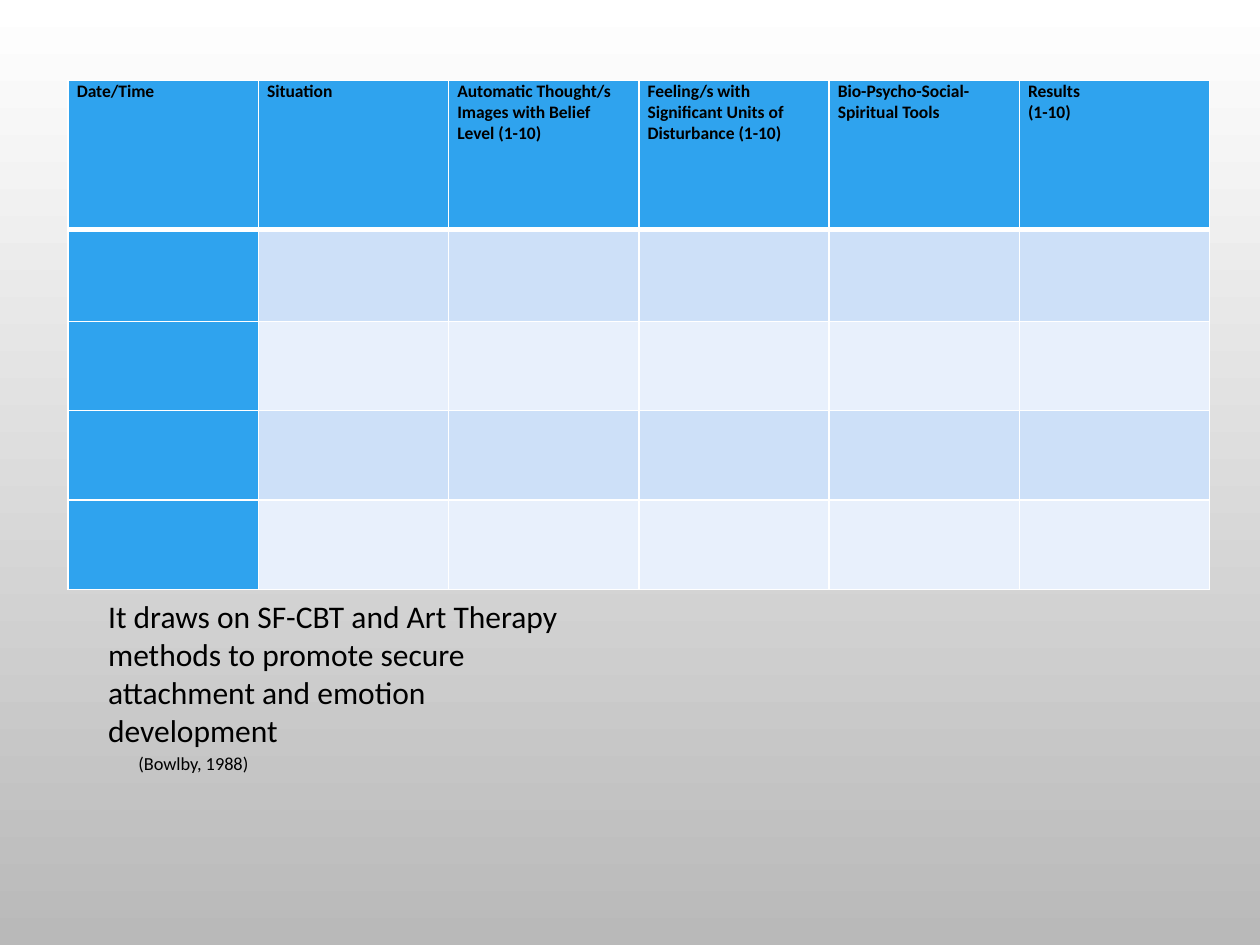
from lxml.etree import SubElement
from pptx import Presentation
from pptx.dml.color import RGBColor
from pptx.enum.text import MSO_AUTO_SIZE as AutoSize
from pptx.oxml.ns import qn
from pptx.util import Inches, Pt

COLORS = {
    "text": "000000",
    "border": "FFFFFF",
    "header": "2FA3EE",
    "band_dark": "CDE0F8",
    "band_light": "E8F0FC",
    "page_top": "FFFFFF",
    "page_bottom": "B9B9B9",
}
FONT = "Calibri"
HEADINGS = [
    "Date/Time",
    "Situation",
    "Automatic Thought/s Images with Belief Level (1-10)",
    "Feeling/s with Significant Units of Disturbance (1-10)",
    "Bio-Psycho-Social-Spiritual Tools",
    "Results\n(1-10)",
]
COLUMN_WIDTH = 1.51
ROW_HEIGHTS = [1.18, 0.73, 0.71, 0.71, 0.71]


def color(name):
    return RGBColor.from_string(COLORS[name])


def write_text(frame, text, size, bold=False, line_spacing=None):
    """Fill a text frame, with one paragraph for each line of text."""
    frame.text = text
    frame.word_wrap = True
    for para in frame.paragraphs:
        if line_spacing:
            para.line_spacing = line_spacing
        for span in para.runs:
            span.font.name = FONT
            span.font.size = Pt(size)
            span.font.bold = bold
            span.font.color.rgb = color("text")


def add_text_box(page, left, top, width, height, text, **text_format):
    box = page.shapes.add_textbox(
        Inches(left), Inches(top), Inches(width), Inches(height))
    write_text(box.text_frame, text, **text_format)
    box.text_frame.auto_size = AutoSize.SHAPE_TO_FIT_TEXT


def set_borders(cell, top=1, bottom=1):
    """Draw the four cell borders; call before the cell is filled."""
    properties = cell._tc.get_or_add_tcPr()
    for side, width in (("L", 1), ("R", 1), ("T", top), ("B", bottom)):
        line = SubElement(properties, qn(f"a:ln{side}"), w=str(Pt(width)))
        fill = SubElement(line, qn("a:solidFill"))
        SubElement(fill, qn("a:srgbClr"), val=COLORS["border"])


def cell_color(row, column):
    if row == 0 or column == 0:
        return "header"
    return "band_dark" if row % 2 else "band_light"


def add_thought_record(page):
    table = page.shapes.add_table(
        len(ROW_HEIGHTS), len(HEADINGS), Inches(0.54), Inches(0.64),
        Inches(COLUMN_WIDTH * len(HEADINGS)), Inches(sum(ROW_HEIGHTS))).table
    table.first_col = True
    for column in table.columns:
        column.width = Inches(COLUMN_WIDTH)
    for row, height in enumerate(ROW_HEIGHTS):
        table.rows[row].height = Inches(height)
        for column, heading in enumerate(HEADINGS):
            cell = table.cell(row, column)
            set_borders(cell, top=3 if row == 1 else 1, bottom=3 if row == 0 else 1)
            cell.fill.solid()
            cell.fill.fore_color.rgb = color(cell_color(row, column))
            if row == 0:
                cell.margin_left = cell.margin_right = Inches(0.07)
                cell.margin_top = cell.margin_bottom = 0
                write_text(cell.text_frame, heading, size=10, bold=True)


def set_background(page):
    fill = page.background.fill
    fill.gradient()
    fill.gradient_angle = 270
    for stop, name in zip(fill.gradient_stops, ("page_top", "page_bottom")):
        stop.color.rgb = color(name)


def main():
    deck = Presentation()
    deck.slide_width, deck.slide_height = Inches(10), Inches(7.5)
    page = deck.slides.add_slide(deck.slide_layouts[6])
    set_background(page)
    add_text_box(page, 1, 5.94, 1.69, 0.26, "(Bowlby, 1988)",
                 size=10.5, line_spacing=0.9)
    add_thought_record(page)
    add_text_box(page, 0.76, 4.69, 3.88, 1.31,
                 "It draws on SF-CBT and Art Therapy methods to promote "
                 "secure attachment and emotion development", size=18)
    deck.save("out.pptx")


if __name__ == "__main__":
    main()
